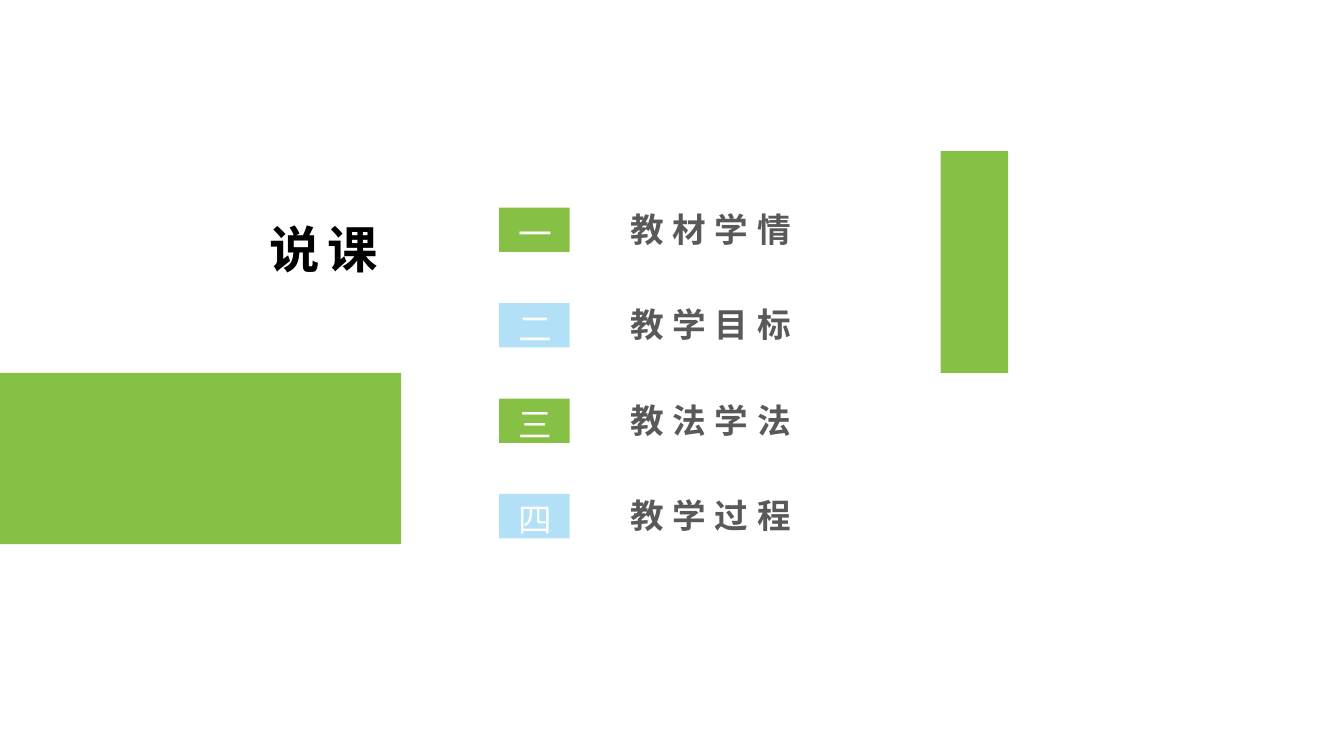
from dataclasses import dataclass

from lxml import etree
from pptx import Presentation
from pptx.dml.color import RGBColor
from pptx.enum import shapes, text
from pptx.oxml import ns
from pptx.util import Inches, Pt


@dataclass(frozen=True)
class Theme:
    font: str = "Noto Sans CJK SC"
    green: str = "86C146"
    blue: str = "B1E0F7"
    white: str = "FFFFFF"
    grey: str = "595959"
    black: str = "000000"
    title_size: int = 36
    item_size: int = 24
    spacing: int = 6


@dataclass(frozen=True)
class Box:
    left: float
    top: float
    width: float
    height: float

    def lengths(self) -> tuple:
        return tuple(Inches(v) for v in (self.left, self.top, self.width, self.height))


@dataclass(frozen=True)
class AgendaItem:
    number: str
    label: str
    color: str


THEME = Theme()
AGENDA = [
    AgendaItem("一", "教材学情", THEME.green),
    AgendaItem("二", "教学目标", THEME.blue),
    AgendaItem("三", "教法学法", THEME.green),
    AgendaItem("四", "教学过程", THEME.blue),
]
AGENDA_TOP = 2.06
AGENDA_PITCH = 0.947


def add_block(parent, box: Box, color: str) -> None:
    block = parent.add_shape(shapes.MSO_SHAPE.RECTANGLE, *box.lengths())
    block.shadow.inherit = False
    block.fill.solid()
    block.fill.fore_color.rgb = RGBColor.from_string(color)
    block.line.fill.background()


def write_text(shape, wording: str, size: int, color: str, bold: bool = False,
               spacing: int = 0, align=text.PP_ALIGN.LEFT) -> None:
    """Fill a shape with one unwrapped line, centred vertically."""
    frame = shape.text_frame
    frame.text = wording
    frame.word_wrap = False
    frame.auto_size = text.MSO_AUTO_SIZE.NONE
    frame.vertical_anchor = text.MSO_ANCHOR.MIDDLE
    paragraph = frame.paragraphs[0]
    paragraph.alignment = align
    font = paragraph.font
    font.name = THEME.font
    font.size = Pt(size)
    font.bold = bold
    font.color.rgb = RGBColor.from_string(color)
    properties = paragraph._p.pPr.find(ns.qn("a:defRPr"))
    properties.set("spc", str(spacing * 100))
    east_asian = etree.SubElement(properties, ns.qn("a:ea"))
    east_asian.set("typeface", THEME.font)


def add_agenda_item(slide, item: AgendaItem, top: float) -> None:
    group = slide.shapes.add_group_shape().shapes
    add_block(group, Box(4.95, top, 0.7, 0.44), item.color)
    number = group.add_textbox(*Box(5.04, top, 0.54, 0.5).lengths())
    write_text(number, item.number, THEME.item_size, THEME.white)
    label = group.add_textbox(*Box(6.11, top - 0.04, 1.88, 0.5).lengths())
    write_text(label, item.label, THEME.item_size, THEME.grey, bold=True,
               spacing=THEME.spacing, align=text.PP_ALIGN.CENTER)


def main() -> None:
    presentation = Presentation()
    presentation.slide_width = Inches(13.33)
    presentation.slide_height = Inches(7.5)
    slide = presentation.slides.add_slide(presentation.slide_layouts.get_by_name("Title Only"))

    for index, item in enumerate(AGENDA):
        add_agenda_item(slide, item, AGENDA_TOP + index * AGENDA_PITCH)

    add_block(slide.shapes, Box(0, 3.7, 3.98, 1.7), THEME.green)
    add_block(slide.shapes, Box(9.33, 1.5, 0.67, 2.2), THEME.green)

    title = slide.shapes.title
    title.left, title.top, title.width, title.height = Box(2.57, 2.11, 1.38, 0.71).lengths()
    write_text(title, "说课", THEME.title_size, THEME.black, bold=True, spacing=THEME.spacing)

    presentation.save("out.pptx")


if __name__ == "__main__":
    main()
